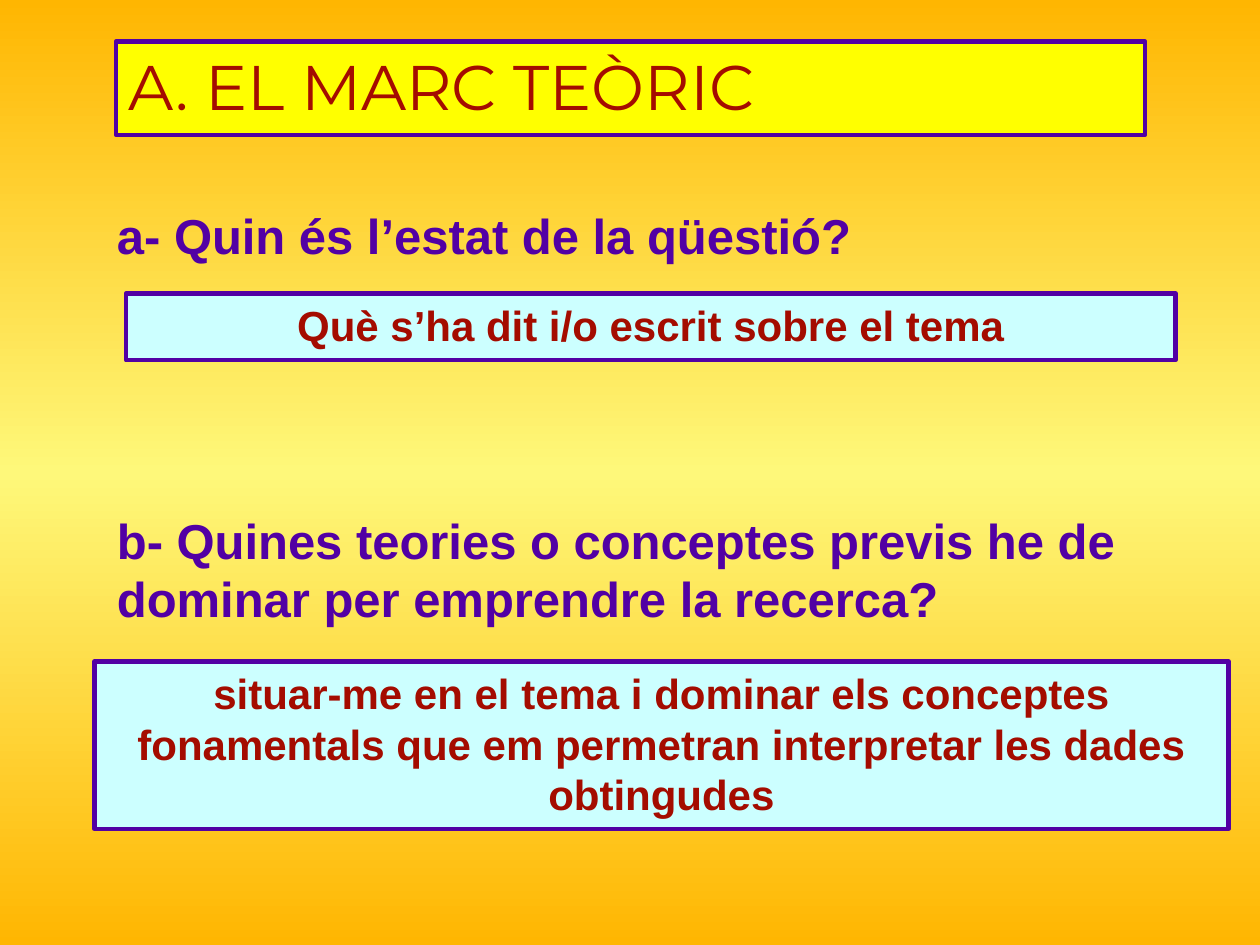
from copy import deepcopy
from dataclasses import dataclass

from pptx import Presentation
from pptx.dml.color import RGBColor
from pptx.enum.shapes import MSO_SHAPE
from pptx.enum.text import MSO_ANCHOR, MSO_AUTO_SIZE, PP_ALIGN
from pptx.oxml.ns import qn
from pptx.util import Inches, Pt


@dataclass(frozen=True)
class Theme:
    """Colours, fonts and sizes of the slide."""
    edge: str = "FFB601"
    glow: str = "FEF87A"
    ink: str = "5200A4"
    red: str = "A40C00"
    sun: str = "FFFF00"
    ice: str = "CCFFFF"
    head: str = "Montserrat"
    body: str = "Arial"
    big: int = 36
    mid: int = 28
    small: int = 24
    rule: float = 2.5


T = Theme()
STYLES = {
    "title": dict(fill=T.sun, font=T.head, size=T.big, color=T.red,
                  bold=False, align=PP_ALIGN.LEFT),
    "ask": dict(fill=None, font=T.body, size=T.mid, color=T.ink,
                bold=True, align=PP_ALIGN.LEFT),
    "reply": dict(fill=T.ice, font=T.body, size=T.small, color=T.red,
                  bold=True, align=PP_ALIGN.CENTER),
}
ITEMS = [
    ("title", "A. EL MARC TEÒRIC", (0.92, 0.33, 8.17, 0.74)),
    ("ask", "a- Quin és l’estat de la qüestió?", (0.83, 1.58, 8.5, 0.57)),
    ("reply", "Què s’ha dit i/o escrit sobre el tema", (1, 2.33, 8.33, 0.53)),
    ("ask", "b- Quines teories o conceptes previs he de dominar per "
     "emprendre la recerca?", (0.83, 4, 8.92, 1.03)),
    ("reply", "situar-me en el tema i dominar els conceptes fonamentals que "
     "em permetran interpretar les dades obtingudes", (0.75, 5.25, 9, 1.33)),
]


def rgb(code):
    return RGBColor.from_string(code)


def paint(slide):
    fill = slide.background.fill
    fill.gradient()
    fill.gradient_angle = 270
    stops = next(slide.element.iter(qn("a:gsLst")))
    stops.append(deepcopy(stops[-1]))
    for stop, pos, code in zip(fill.gradient_stops, (0, 0.5, 1),
                               (T.edge, T.glow, T.edge)):
        stop.position = pos
        stop.color.rgb = rgb(code)


def place(slide, kind, text, spot):
    style = STYLES[kind]
    rect = [Inches(v) for v in spot]
    if style["fill"]:
        box = slide.shapes.add_shape(MSO_SHAPE.RECTANGLE, *rect)
        box.shadow.inherit = False
        box.fill.solid()
        box.fill.fore_color.rgb = rgb(style["fill"])
        box.line.color.rgb = rgb(T.ink)
        box.line.width = Pt(T.rule)
    else:
        box = slide.shapes.add_textbox(*rect)
    frame = box.text_frame
    frame.word_wrap = True
    frame.auto_size = MSO_AUTO_SIZE.SHAPE_TO_FIT_TEXT
    frame.vertical_anchor = MSO_ANCHOR.TOP
    frame.text = text
    para = frame.paragraphs[0]
    para.alignment = style["align"]
    para.font.name = style["font"]
    para.font.size = Pt(style["size"])
    para.font.bold = style["bold"]
    para.font.color.rgb = rgb(style["color"])


def main():
    deck = Presentation()
    deck.slide_width, deck.slide_height = Inches(10), Inches(7.5)
    slide = deck.slides.add_slide(deck.slide_layouts[6])
    paint(slide)
    for item in ITEMS:
        place(slide, *item)
    deck.save("out.pptx")


if __name__ == "__main__":
    main()
